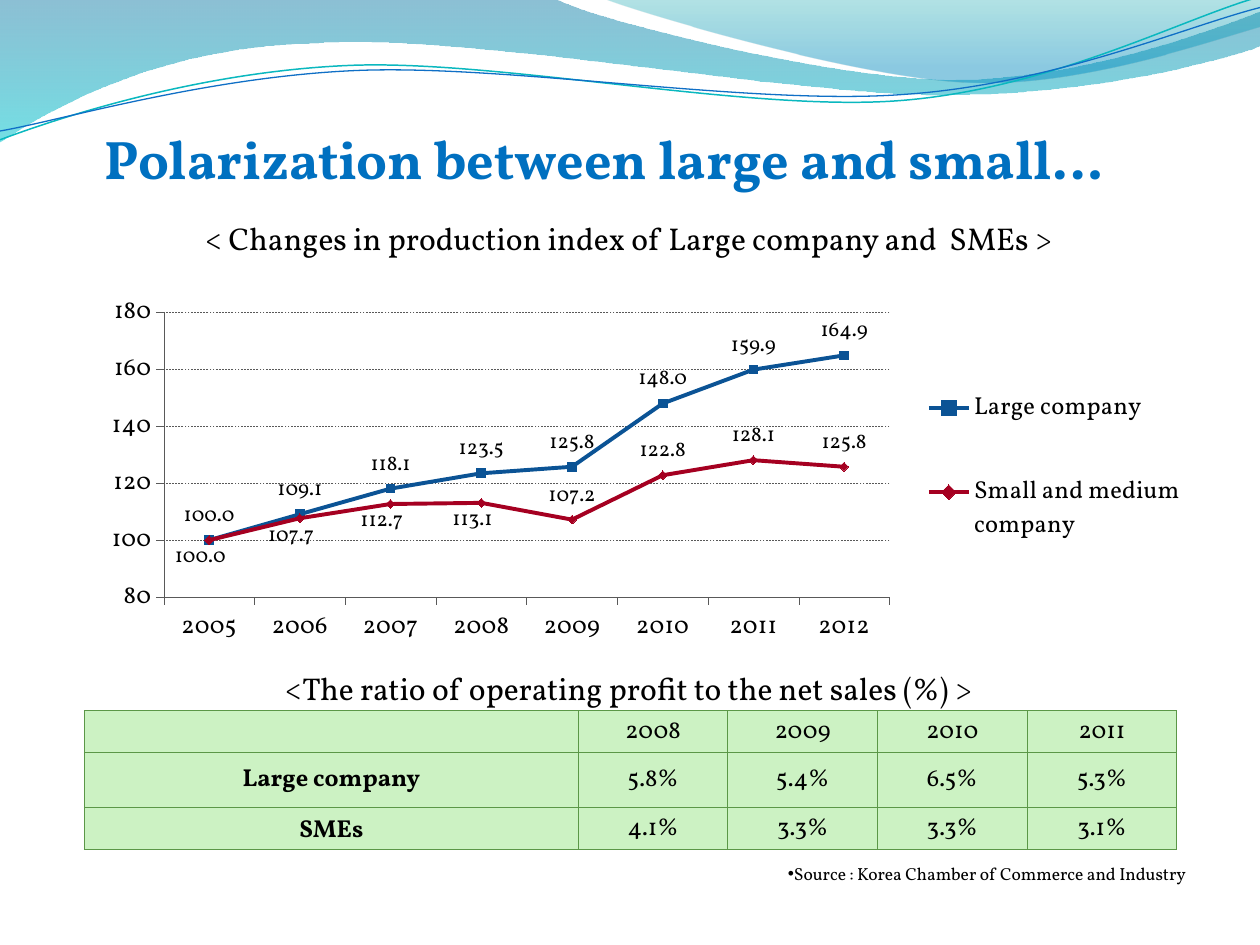
from lxml import etree
from pptx import Presentation
from pptx.chart.data import CategoryChartData
from pptx.dml.color import RGBColor
from pptx.enum.chart import (XL_CHART_TYPE, XL_LABEL_POSITION, XL_LEGEND_POSITION,
                             XL_MARKER_STYLE, XL_TICK_MARK)
from pptx.enum.dml import MSO_LINE
from pptx.enum.text import MSO_ANCHOR, PP_ALIGN
from pptx.oxml import parse_xml
from pptx.oxml.ns import nsdecls, qn
from pptx.util import Inches, Pt

LEFT, CENTER, RIGHT = PP_ALIGN.LEFT, PP_ALIGN.CENTER, PP_ALIGN.RIGHT
BOTTOM, MIDDLE = MSO_ANCHOR.BOTTOM, MSO_ANCHOR.MIDDLE
LABEL_ABOVE, LABEL_BELOW = XL_LABEL_POSITION.ABOVE, XL_LABEL_POSITION.BELOW
TICK_OUTSIDE = XL_TICK_MARK.OUTSIDE
SQUARE, DIAMOND = XL_MARKER_STYLE.SQUARE, XL_MARKER_STYLE.DIAMOND
FONT = "Vollkorn"
BLACK, GRAY = "000000", "595959"
CHART_WIDTH, CHART_HEIGHT = 8.74, 3
TABLE_WIDTH, NAME_WIDTH, YEAR_COUNT = 8.67, 3.92, 4

YEARS = [str(year) for year in range(2005, 2013)]
# name, values, colour, marker style, number of leading labels below the line
SERIES = [
    ("Large company", [100, 109.1, 118.1, 123.5, 125.8, 148, 159.9, 164.9],
     "0B5395", SQUARE, 0),
    ("Small and medium company", [100, 107.7, 112.7, 113.1, 107.2, 122.8, 128.1, 125.8],
     "A50021", DIAMOND, 4),
]
PROFIT_ROWS = [
    ["", "2008", "2009", "2010", "2011"],
    ["Large company", "5.8%", "5.4%", "6.5%", "5.3%"],
    ["SMEs", "4.1%", "3.3%", "3.3%", "3.1%"],
]

# Each wave is a start point followed by lines (2 numbers) and Bézier curves (6 numbers).
LEFT_WAVE = [
    (0, 0), (4.4, -0.01), (4.76, 0.17, 6.64, 0.63, 7.58, 0.63),
    (8.53, 0.63, 9.58, 0.26, 10, 0.09), (10.01, 0.36),
    (9.83, 0.44, 8.7, 0.76, 7.46, 0.75), (6.22, 0.75, 3.82, 0.28, 2.57, 0.34),
    (1.29, 0.36, 0.46, 0.83, -0.01, 1.13)]
RIGHT_WAVE = [
    (4.79, -0.01), (5.09, 0.11, 6.82, 0.62, 7.69, 0.65),
    (8.56, 0.69, 9.61, 0.32, 10, 0.21), (10, 0)]
TEAL_LINE = [
    (0, 1.11), (0.48, 0.93, 1.58, 0.57, 2.77, 0.52),
    (3.95, 0.47, 5.93, 0.89, 7.13, 0.8), (8.33, 0.71, 9.38, 0.15, 9.98, -0.02)]
BLUE_LINE = [
    (0, 1.04), (0.47, 0.96, 1.64, 0.61, 2.83, 0.56),
    (4.03, 0.51, 5.97, 0.84, 7.17, 0.75), (8.36, 0.67, 9.41, 0.21, 10, 0.06)]


def color(value):
    return RGBColor.from_string(value)


def style_font(font, size, value=BLACK, bold=False):
    font.name, font.size, font.bold = FONT, Pt(size), bold
    font.color.rgb = color(value)


def style_line(line, value, width):
    line.color.rgb = color(value)
    line.width = Pt(width)


def bend_segments(shape, segments):
    """Turn the straight segments that have control points into Bézier curves."""
    lines = list(shape._element.iter(qn("a:lnTo")))
    for line, segment in zip(lines, segments):
        if len(segment) == 6:
            curve = etree.Element(qn("a:cubicBezTo"))
            for x, y in zip(segment[::2], segment[1::2]):
                point = etree.SubElement(curve, qn("a:pt"))
                point.set("x", str(Inches(x) - shape.left))
                point.set("y", str(Inches(y) - shape.top))
            line.getparent().replace(line, curve)


def add_wave(slide, segments, closed):
    points = [(Inches(segment[-2]), Inches(segment[-1])) for segment in segments]
    builder = slide.shapes.build_freeform(*points[0])
    builder.add_line_segments(points[1:], close=closed)
    shape = builder.convert_to_shape()
    bend_segments(shape, segments[1:])
    shape.shadow.inherit = False
    return shape


def add_gradient_wave(slide, segments, stops):
    """Each stop is position, colour and opacity in percent, from top to bottom."""
    shape = add_wave(slide, segments, True)
    shape.line.fill.background()
    shape.fill.gradient()
    shape.fill.gradient_angle = 270
    for stop, (position, value, _) in zip(shape.fill.gradient_stops, stops):
        stop.position = position
        stop.color.rgb = color(value)
    for element, (_, _, opacity) in zip(shape._element.spPr.iter(qn("a:srgbClr")), stops):
        etree.SubElement(element, qn("a:alpha")).set("val", str(opacity * 1000))


def add_wave_line(slide, segments, value, width):
    shape = add_wave(slide, segments, False)
    shape.fill.background()
    style_line(shape.line, value, width)


def write_text(frame, text, size, alignment, value=BLACK, bold=False):
    paragraph = frame.paragraphs[0]
    paragraph.text = text
    paragraph.alignment = alignment
    style_font(paragraph.font, size, value, bold)
    return paragraph


def set_title(slide, text):
    title = slide.shapes.title
    title.left, title.top = Inches(0.83), Inches(0.92)
    title.width, title.height = Inches(8.66), Inches(0.59)
    frame = title.text_frame
    frame.margin_left = frame.margin_right = frame.margin_bottom = 0
    frame.vertical_anchor = BOTTOM
    write_text(frame, text, 31, LEFT, "0070C0", True)


def add_text(slide, text, left, top, width, height, size, alignment, wrap=True):
    box = slide.shapes.add_textbox(Inches(left), Inches(top), Inches(width), Inches(height))
    box.text_frame.word_wrap = wrap
    return write_text(box.text_frame, text, size, alignment)


def add_bullet(paragraph):
    properties = paragraph._p.get_or_add_pPr()
    etree.SubElement(properties, qn("a:buFont")).set("typeface", "Arial")
    etree.SubElement(properties, qn("a:buChar")).set("char", "•")


def set_layout(element, index, x, y, size=None, inner=False):
    """Place a chart part, in inches; without a size, shift it from its usual place."""
    for old in element.findall(qn("c:layout")):
        element.remove(old)
    target = '<c:layoutTarget val="inner"/>' if inner else ""
    modes = '<c:xMode val="edge"/><c:yMode val="edge"/>' if size else ""
    extent = (f'<c:w val="{size[0] / CHART_WIDTH}"/><c:h val="{size[1] / CHART_HEIGHT}"/>'
              if size else "")
    element.insert(index, parse_xml(
        f'<c:layout {nsdecls("c")}><c:manualLayout>{target}{modes}'
        f'<c:x val="{x / CHART_WIDTH}"/><c:y val="{y / CHART_HEIGHT}"/>{extent}'
        '</c:manualLayout></c:layout>'))


def style_series(series, value, marker_style, labels_below):
    series.smooth = False
    style_line(series.format.line, value, 2.25)
    marker = series.marker
    marker.style, marker.size = marker_style, 5
    marker.format.fill.solid()
    marker.format.fill.fore_color.rgb = color(value)
    marker.format.line.color.rgb = color(value)
    labels = series.data_labels
    labels.show_value = True
    labels.position = LABEL_ABOVE
    style_font(labels.font, 12)
    for index in range(labels_below):
        label = series.points[index].data_label
        style_font(label.font, 12)
        label.position = LABEL_BELOW
    for element in labels._element.findall(qn("c:dLbl")):
        set_layout(element, 1, -0.07, -0.05)


def add_index_chart(slide):
    data = CategoryChartData(number_format="0.0")
    data.categories = YEARS
    for name, values, *_ in SERIES:
        data.add_series(name, values)
    chart = slide.shapes.add_chart(XL_CHART_TYPE.LINE_MARKERS, Inches(0.76), Inches(2.26),
                                   Inches(CHART_WIDTH), Inches(CHART_HEIGHT), data).chart
    style_font(chart.font, 18)
    chart.has_title = False
    chart.has_legend = True
    chart.legend.position = XL_LEGEND_POSITION.RIGHT
    chart.legend.include_in_layout = False
    style_font(chart.legend.font, 14)
    set_layout(chart.legend._element, 1, 6.52, 0.45, (2.18, 2))
    plot = chart.plots[0]
    plot.vary_by_categories = False
    set_layout(plot._element.getparent(), 0, 0.54, 0.22, (5.76, 2.26), inner=True)
    for axis in (chart.category_axis, chart.value_axis):
        axis.major_tick_mark = TICK_OUTSIDE
        style_line(axis.format.line, GRAY, 0.25)
        style_font(axis.tick_labels.font, 14)
    axis = chart.value_axis
    axis.minimum_scale, axis.maximum_scale, axis.major_unit = 80, 180, 20
    axis.tick_labels.number_format = "General"
    axis.tick_labels.number_format_is_linked = False
    style_line(axis.major_gridlines.format.line, GRAY, 0.25)
    axis.major_gridlines.format.line.dash_style = MSO_LINE.DASH
    for series, (_, _, *style) in zip(plot.series, SERIES):
        style_series(series, *style)


def set_borders(cell, value, width):
    properties = cell._tc.get_or_add_tcPr()
    for index, side in enumerate(("lnL", "lnR", "lnT", "lnB")):
        properties.insert(index, parse_xml(
            f'<a:{side} {nsdecls("a")} w="{Pt(width)}"><a:solidFill>'
            f'<a:srgbClr val="{value}"/></a:solidFill></a:{side}>'))


def add_profit_table(slide):
    table = slide.shapes.add_table(len(PROFIT_ROWS), YEAR_COUNT + 1, Inches(0.67),
                                   Inches(5.64), Inches(TABLE_WIDTH), Inches(1.1)).table
    year_width = (TABLE_WIDTH - NAME_WIDTH) / YEAR_COUNT
    for column, width in zip(table.columns, [NAME_WIDTH] + [year_width] * YEAR_COUNT):
        column.width = Inches(width)
    for row, height, texts in zip(table.rows, (0.33, 0.44, 0.33), PROFIT_ROWS):
        row.height = Inches(height)
        for index, (cell, text) in enumerate(zip(row.cells, texts)):
            cell.fill.solid()
            cell.fill.fore_color.rgb = color("CCF2C3")
            set_borders(cell, "5B9747", 0.75)
            cell.margin_left = cell.margin_right = cell.margin_top = Inches(0.01)
            cell.margin_bottom = 0
            cell.vertical_anchor = MIDDLE
            write_text(cell.text_frame, text, 14, CENTER, bold=index == 0)
    table.cell(2, 0).text_frame.paragraphs[0].line_spacing = 0.8


def main():
    presentation = Presentation()
    presentation.slide_width, presentation.slide_height = Inches(10), Inches(7.5)
    slide = presentation.slides.add_slide(presentation.slide_layouts[5])
    add_gradient_wave(slide, LEFT_WAVE, [(0, "0074A1", 45), (1, "00C6CF", 55)])
    add_gradient_wave(slide, RIGHT_WAVE, [(0, "00A1A9", 30), (0.8, "008BBF", 45)])
    add_wave_line(slide, TEAL_LINE, "0AB8BF", 0.85)
    add_wave_line(slide, BLUE_LINE, "0F6FC6", 0.75)
    set_title(slide, "Polarization between large and small…")
    for text, top in (("< Changes in production index of Large company and  SMEs >", 1.69),
                      ("<The ratio of operating profit to the net sales (%) >", 5.26)):
        add_text(slide, text, -0.01, top, 10, 0.4, 18, CENTER)
    add_index_chart(slide)
    add_bullet(add_text(slide, "Source : Korea Chamber of Commerce and Industry",
                        6.05, 6.8, 3.46, 0.27, 10, RIGHT, wrap=False))
    add_profit_table(slide)
    presentation.save("out.pptx")


if __name__ == "__main__":
    main()
